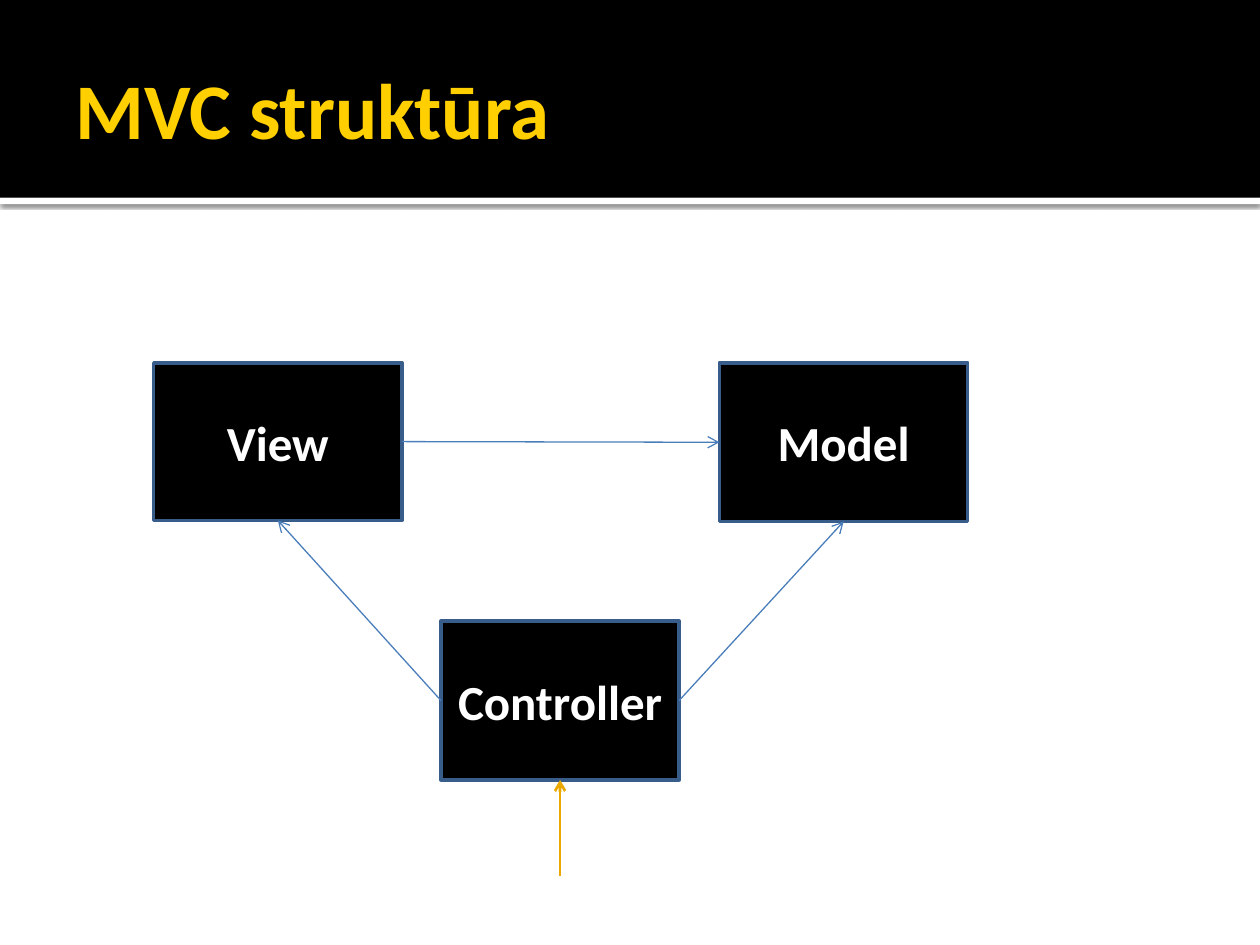
from lxml.etree import SubElement
from pptx import Presentation
from pptx.dml.color import RGBColor
from pptx.enum.shapes import MSO_CONNECTOR, MSO_SHAPE
from pptx.enum.text import MSO_ANCHOR, PP_ALIGN
from pptx.oxml.ns import qn
from pptx.util import Inches, Pt

BLACK = RGBColor(0x00, 0x00, 0x00)
WHITE = RGBColor(0xFF, 0xFF, 0xFF)
YELLOW = RGBColor(0xFF, 0xCF, 0x00)
AMBER = RGBColor(0xEB, 0xA9, 0x00)
BLUE = RGBColor(0x4A, 0x7E, 0xBB)
NAVY = RGBColor(0x38, 0x5D, 0x8A)

# Content: boxes as left, top, width, height in inches
TITLE = "MVC struktūra"
COMPONENTS = {
    "Controller": (3.5, 4.93, 1.89, 1.26),
    "Model": (5.71, 2.88, 1.97, 1.26),
    "View": (1.22, 2.88, 1.97, 1.25),
}
TOP, LEFT, BOTTOM, RIGHT = range(4)
LINKS = [
    ("Controller", RIGHT, "Model", BOTTOM),
    ("Controller", LEFT, "View", BOTTOM),
    ("View", RIGHT, "Model", LEFT),
]
ENTRY_LENGTH = 0.76
TITLE_FONT = {"name": "Calibri", "size": Pt(45), "bold": True}
LABEL_FONT = {"name": "Calibri", "size": Pt(28), "bold": True}
TITLE_FRAME = {
    "margin_left": Inches(0.1), "margin_right": Inches(0.05),
    "margin_top": Inches(0.05), "margin_bottom": Inches(0.05),
    "vertical_anchor": MSO_ANCHOR.MIDDLE, "word_wrap": True,
}


def apply(target, values):
    for key, value in values.items():
        setattr(target, key, value)


def write(shape, text, font, color, align):
    paragraph = shape.text_frame.paragraphs[0]
    paragraph.alignment = align
    run = paragraph.add_run()
    run.text = text
    apply(run.font, font)
    run.font.color.rgb = color


def add_block(slide, kind, box, fill):
    block = slide.shapes.add_shape(kind, *map(Inches, box))
    block.shadow.inherit = False
    block.fill.solid()
    block.fill.fore_color.rgb = fill
    block.line.fill.background()
    return block


def add_arrow(slide, color, width, start=(0, 0)):
    x, y = map(Inches, start)
    arrow = slide.shapes.add_connector(MSO_CONNECTOR.STRAIGHT, x, y, x, y)
    arrow.line.color.rgb = color
    arrow.line.width = Pt(width)
    SubElement(arrow.line._get_or_add_ln(), qn("a:tailEnd"), type="arrow")
    SubElement(arrow._element.spPr, qn("a:effectLst"))
    return arrow


def add_shadow(shape):
    effects = shape._element.spPr.find(qn("a:effectLst"))
    shadow = SubElement(effects, qn("a:outerShdw"), blurRad=str(Pt(2.5)),
                        dist=str(Pt(0.8)), dir="5400000", rotWithShape="0")
    color = SubElement(shadow, qn("a:srgbClr"), val=str(BLACK))
    SubElement(color, qn("a:alpha"), val="60000")


def main():
    prs = Presentation()
    prs.slide_width, prs.slide_height = Inches(10), Inches(7.5)
    slide = prs.slides.add_slide(prs.slide_layouts[5])

    # Header band with a shadowed white edge
    add_shadow(add_block(slide, MSO_SHAPE.RECTANGLE, (0, 1.57, 10, 0.05), WHITE))
    add_block(slide, MSO_SHAPE.RECTANGLE, (0, 0, 10, 1.57), BLACK)

    # Title, brought in front of the band
    title = slide.shapes.title
    slide.shapes._spTree.append(title._element)
    apply(title, {"left": Inches(0.5), "top": Inches(0.17),
                  "width": Inches(9), "height": Inches(1.37)})
    apply(title.text_frame, TITLE_FRAME)
    write(title, TITLE, TITLE_FONT, YELLOW, PP_ALIGN.LEFT)

    # Components
    blocks = {}
    for name, box in COMPONENTS.items():
        block = add_block(slide, MSO_SHAPE.FLOWCHART_PROCESS, box, BLACK)
        block.line.color.rgb = NAVY
        block.line.width = Pt(2)
        block.text_frame.vertical_anchor = MSO_ANCHOR.MIDDLE
        write(block, name, LABEL_FONT, WHITE, PP_ALIGN.CENTER)
        blocks[name] = block

    # Links between components
    for source, source_side, target, target_side in LINKS:
        link = add_arrow(slide, BLUE, 0.75)
        link.begin_connect(blocks[source], source_side)
        link.end_connect(blocks[target], target_side)

    # Entry arrow rising into the controller
    left, top, width, height = COMPONENTS["Controller"]
    start = (left + width / 2, top + height + ENTRY_LENGTH)
    entry = add_arrow(slide, AMBER, 1.5, start)
    entry.end_connect(blocks["Controller"], BOTTOM)

    prs.save("out.pptx")


if __name__ == "__main__":
    main()
